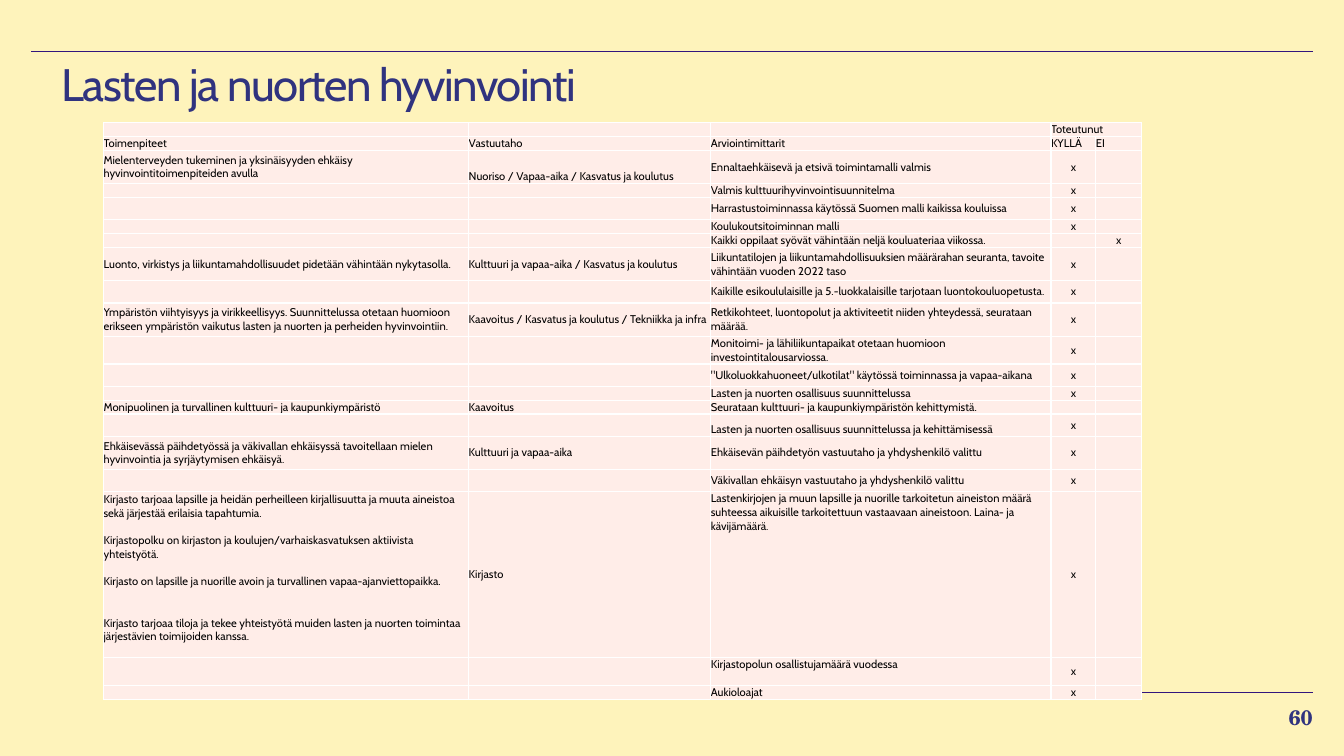
from lxml import etree
from pptx import Presentation
from pptx.dml.color import RGBColor
from pptx.enum import shapes, text
from pptx.oxml import ns
from pptx.util import Cm, Pt

# Content: three text columns, then the column that holds the mark
YES, NO = 3, 4
TITLE = "Lasten ja nuorten hyvinvointi"
PAGE = "60"
DONE = "Toteutunut"
HEADERS = ["Toimenpiteet", "Vastuutaho", "Arviointimittarit", "KYLLÄ", "EI"]
LIBRARY = [
    "Kirjasto tarjoaa lapsille ja heidän perheilleen kirjallisuutta ja muuta aineistoa sekä järjestää erilaisia tapahtumia.",
    "Kirjastopolku on kirjaston ja koulujen/varhaiskasvatuksen aktiivista yhteistyötä.",
    "Kirjasto on lapsille ja nuorille avoin ja turvallinen vapaa-ajanviettopaikka.",
    "Kirjasto tarjoaa tiloja ja tekee yhteistyötä muiden lasten ja nuorten toimintaa järjestävien toimijoiden kanssa.",
]
MEASURES = [
    ("Mielenterveyden tukeminen ja yksinäisyyden ehkäisy hyvinvointitoimenpiteiden avulla",
     "Nuoriso / Vapaa-aika / Kasvatus ja koulutus",
     "Ennaltaehkäisevä ja etsivä toimintamalli valmis", YES),
    ("", "", "Valmis kulttuurihyvinvointisuunnitelma", YES),
    ("", "", "Harrastustoiminnassa käytössä Suomen malli kaikissa kouluissa", YES),
    ("", "", "Koulukoutsitoiminnan malli", YES),
    ("", "", "Kaikki oppilaat syövät vähintään neljä kouluateriaa viikossa.", NO),
    ("Luonto, virkistys ja liikuntamahdollisuudet pidetään vähintään nykytasolla.",
     "Kulttuuri ja vapaa-aika / Kasvatus ja koulutus",
     "Liikuntatilojen ja liikuntamahdollisuuksien määrärahan seuranta, tavoite vähintään vuoden 2022 taso", YES),
    ("", "", "Kaikille esikoululaisille ja 5.-luokkalaisille tarjotaan luontokouluopetusta.", YES),
    ("Ympäristön viihtyisyys ja virikkeellisyys. Suunnittelussa otetaan huomioon erikseen ympäristön vaikutus lasten ja nuorten ja perheiden hyvinvointiin.",
     "Kaavoitus / Kasvatus ja koulutus / Tekniikka ja infra",
     "Retkikohteet, luontopolut ja aktiviteetit niiden yhteydessä, seurataan määrää.", YES),
    ("", "", "Monitoimi- ja lähiliikuntapaikat otetaan huomioon investointitalousarviossa.", YES),
    ("", "", "\"Ulkoluokkahuoneet/ulkotilat\" käytössä toiminnassa ja vapaa-aikana", YES),
    ("", "", "Lasten ja nuorten osallisuus suunnittelussa", YES),
    ("Monipuolinen ja turvallinen kulttuuri- ja kaupunkiympäristö", "Kaavoitus",
     "Seurataan kulttuuri- ja kaupunkiympäristön kehittymistä.", None),
    ("", "", "Lasten ja nuorten osallisuus suunnittelussa ja kehittämisessä", YES),
    ("Ehkäisevässä päihdetyössä ja väkivallan ehkäisyssä tavoitellaan mielen hyvinvointia ja syrjäytymisen ehkäisyä.",
     "Kulttuuri ja vapaa-aika",
     "Ehkäisevän päihdetyön vastuutaho ja yhdyshenkilö valittu", YES),
    ("", "", "Väkivallan ehkäisyn vastuutaho ja yhdyshenkilö valittu", YES),
    ("\n".join(LIBRARY), "Kirjasto",
     "Lastenkirjojen ja muun lapsille ja nuorille tarkoitetun aineiston määrä suhteessa aikuisille tarkoitettuun vastaavaan aineistoon. Laina- ja kävijämäärä.", YES),
    ("", "", "Kirjastopolun osallistujamäärä vuodessa", YES),
    ("", "", "Aukioloajat", YES),
]

# Style and measures in cm
CREAM, ROSE = RGBColor(0xFE, 0xF3, 0xBB), RGBColor(0xFF, 0xED, 0xE8)
NAVY, VIOLET = RGBColor(0x30, 0x33, 0x7F), RGBColor(0x32, 0x15, 0x7D)
BLACK = RGBColor(0, 0, 0)
SANS, SERIF = "Cabin", "TeX Gyre Schola"
COL_WIDTHS = [9.2, 6.1, 8.57, 1.13, 1.16]
ONE, MID, TWO, TALL, LIB = 0.35, 0.56, 0.7, 0.84, 4.18
ROW_HEIGHTS = [ONE, ONE, TALL, ONE, MID, ONE, ONE, TALL, MID, TALL,
               TWO, MID, ONE, ONE, MID, TALL, MID, LIB, TWO, ONE]
LIBRARY_ROW = 17
LIBRARY_GAPS = [0, 9.8, 9.8, 19.6]
BOTTOM_CELLS = {(2, 1), (13, 1), (14, 2), (LIBRARY_ROW, 0), (19, 2)}
TOP_CELLS = {(LIBRARY_ROW, 2), (18, 2)}


def set_font(p, name, size, color, bold=False):
    f = p.font
    f.name, f.size, f.bold = name, Pt(size), bold
    f.color.rgb = color


def no_margins(box):
    box.margin_left = box.margin_top = box.margin_right = box.margin_bottom = 0


def add_rule(s, x1, x2, y):
    line = s.shapes.add_connector(shapes.MSO_CONNECTOR.STRAIGHT, Cm(x1), Cm(y), Cm(x2), Cm(y))
    line.line.color.rgb, line.line.width = VIOLET, Pt(0.75)
    etree.SubElement(line._element.spPr, ns.qn("a:effectLst"))


def add_label(s, words, x, y, w, h):
    tf = s.shapes.add_textbox(Cm(x), Cm(y), Cm(w), Cm(h)).text_frame
    tf.word_wrap = True
    no_margins(tf)
    tf.text = words
    return tf, tf.paragraphs[0]


def white_borders(cell):
    tcPr = cell._tc.get_or_add_tcPr()
    for i, side in enumerate(("lnL", "lnR", "lnT", "lnB")):
        ln = etree.Element(ns.qn("a:" + side), w=str(Pt(1)))
        fill = etree.SubElement(ln, ns.qn("a:solidFill"))
        etree.SubElement(fill, ns.qn("a:srgbClr"), val="FFFFFF")
        tcPr.insert(i, ln)


def fill_cell(cell, words, row, col):
    cell.fill.solid()
    cell.fill.fore_color.rgb = ROSE
    white_borders(cell)
    no_margins(cell)
    anchor = text.MSO_ANCHOR
    if row < 2 or (row, col) in BOTTOM_CELLS:
        cell.vertical_anchor = anchor.BOTTOM
    elif (row, col) in TOP_CELLS:
        cell.vertical_anchor = anchor.TOP
    else:
        cell.vertical_anchor = anchor.MIDDLE
    cell.text_frame.text = words
    for p in cell.text_frame.paragraphs:
        set_font(p, SANS, 8, BLACK)
        if row > 1 and col >= YES:
            p.alignment = text.PP_ALIGN.CENTER
        if not words:  # keeps empty rows low
            p._p.get_or_add_endParaRPr().set("sz", "800")


# Slide
prs = Presentation()
prs.slide_width, prs.slide_height = Cm(33.86), Cm(19.05)
s = prs.slides.add_slide(prs.slide_layouts[6])
s.background.fill.solid()
s.background.fill.fore_color.rgb = CREAM

# Rules and title
add_rule(s, 0.79, 33.07, 1.3)
add_rule(s, 4.22, 33.07, 17.45)
tf, p = add_label(s, TITLE, 1.55, 1.57, 31.52, 1.09)
p.line_spacing = 0.9
set_font(p, SANS, 32.5, NAVY)
p.runs[0]._r.get_or_add_rPr().set("spc", "-100")

# Table
grid = [["", "", "", DONE, ""], HEADERS]
for *words, mark in MEASURES:
    grid.append(words + ["x" if mark == col else "" for col in (YES, NO)])
table = s.shapes.add_table(len(grid), len(COL_WIDTHS), Cm(2.61), Cm(3.09),
                           Cm(sum(COL_WIDTHS)), Cm(sum(ROW_HEIGHTS))).table
table.first_row = table.horz_banding = False
for column, width in zip(table.columns, COL_WIDTHS):
    column.width = Cm(width)
for i, (height, words) in enumerate(zip(ROW_HEIGHTS, grid)):
    table.rows[i].height = Cm(height)
    for j, word in enumerate(words):
        fill_cell(table.cell(i, j), word, i, j)
table.cell(0, YES).merge(table.cell(0, NO))

# Spacing of the library paragraphs
library = table.cell(LIBRARY_ROW, 0)
library.margin_bottom = Cm(ONE)
for p, gap in zip(library.text_frame.paragraphs, LIBRARY_GAPS):
    p.space_before = Pt(gap)

# Page number
tf, p = add_label(s, PAGE, 32.1, 17.75, 0.97, 0.66)
tf.vertical_anchor = text.MSO_ANCHOR.MIDDLE
p.alignment = text.PP_ALIGN.RIGHT
set_font(p, SERIF, 15, NAVY, bold=True)

prs.save("out.pptx")
